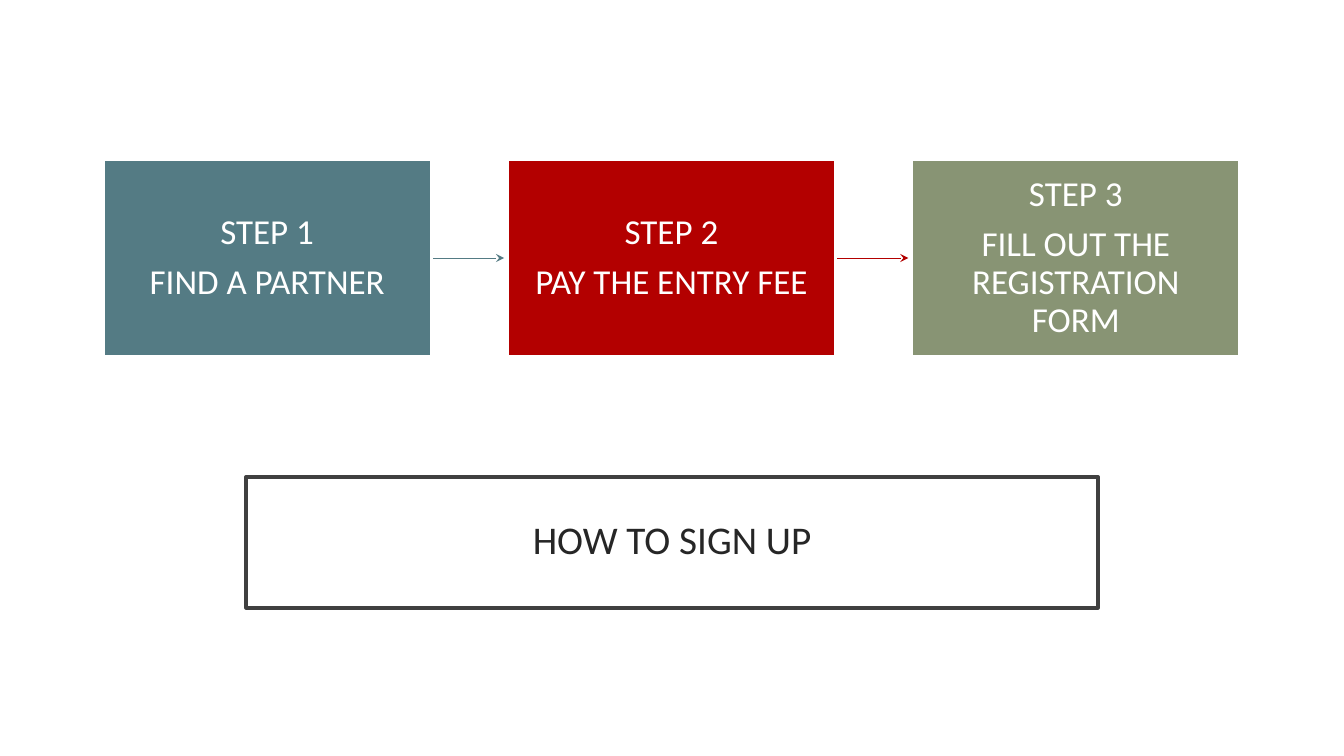
from dataclasses import dataclass

from pptx import Presentation
from pptx.dml.color import RGBColor
from pptx.enum.shapes import MSO_CONNECTOR, MSO_SHAPE
from pptx.enum.text import MSO_ANCHOR, MSO_AUTO_SIZE, PP_ALIGN
from pptx.oxml.ns import qn
from pptx.util import Inches, Pt
from lxml.etree import SubElement


@dataclass(frozen=True)
class Theme:
    font: str = "Calibri"
    title_size: float = 28
    step_size: float = 25
    paragraph_gap: float = 8.8
    border: float = 2.5
    arrow_width: float = 0.75
    white: RGBColor = RGBColor.from_string("FFFFFF")
    title_text: RGBColor = RGBColor.from_string("262626")
    title_border: RGBColor = RGBColor.from_string("404040")
    step_fills: tuple = tuple(map(RGBColor.from_string, ("547B84", "B30000", "889474")))


THEME = Theme()
STEPS = (
    ("STEP 1", "FIND A PARTNER"),
    ("STEP 2", "PAY THE ENTRY FEE"),
    ("STEP 3", "FILL OUT THE REGISTRATION FORM"),
)
STEP_LEFT, STEP_TOP, STEP_PITCH = 1.02, 1.58, 4.01
STEP_WIDTH, STEP_HEIGHT = 3.26, 1.96
ARROW_LENGTH = 0.72


def style_box(s, fill, border):
    s.fill.solid()
    s.fill.fore_color.rgb = fill
    s.line.color.rgb = border
    s.line.width = Pt(THEME.border)


def write_centred(s, lines, size, color, inset_x, inset_y):
    tf = s.text_frame
    tf.word_wrap = True
    tf.auto_size = MSO_AUTO_SIZE.NONE
    tf.vertical_anchor = MSO_ANCHOR.MIDDLE
    tf.margin_left = tf.margin_right = Inches(inset_x)
    tf.margin_top = tf.margin_bottom = Inches(inset_y)
    for i, line in enumerate(lines):
        p = tf.add_paragraph() if i else tf.paragraphs[0]
        p.text = line
        p.alignment = PP_ALIGN.CENTER
        p.line_spacing = 0.9
        p.space_before = Pt(THEME.paragraph_gap if i else 0)
        p.font.name = THEME.font
        p.font.size = Pt(size)
        p.font.color.rgb = color


def add_title(slide, text):
    s = slide.shapes.title
    s.left, s.top, s.width, s.height = map(Inches, (2.44, 4.73, 8.45, 1.3))
    style_box(s, THEME.white, THEME.title_border)
    write_centred(s, [text], THEME.title_size, THEME.title_text, 0.2, 0.2)


def add_step(slide, left, lines, fill):
    s = slide.shapes.add_shape(
        MSO_SHAPE.RECTANGLE, Inches(left), Inches(STEP_TOP),
        Inches(STEP_WIDTH), Inches(STEP_HEIGHT))
    s.shadow.inherit = False
    style_box(s, fill, THEME.white)
    write_centred(s, lines, THEME.step_size, THEME.white, 0.16, 0.17)
    return s


def add_arrow(slide, left, color):
    y = Inches(STEP_TOP + STEP_HEIGHT / 2)
    arrow = slide.shapes.add_connector(
        MSO_CONNECTOR.STRAIGHT, Inches(left), y, Inches(left + ARROW_LENGTH), y)
    arrow.line.color.rgb = color
    arrow.line.width = Pt(THEME.arrow_width)
    properties = arrow.element.spPr
    SubElement(properties.find(qn("a:ln")), qn("a:tailEnd"), type="stealth")
    SubElement(properties, qn("a:effectLst"))
    return arrow


def main():
    prs = Presentation()
    prs.slide_width, prs.slide_height = Inches(13.33), Inches(7.5)
    slide = prs.slides.add_slide(prs.slide_layouts[5])
    add_title(slide, "HOW TO SIGN UP")
    for i, (lines, fill) in enumerate(zip(STEPS, THEME.step_fills)):
        left = STEP_LEFT + i * STEP_PITCH
        # The arrow lies behind its box, so the white border covers its start.
        arrow = add_arrow(slide, left + STEP_WIDTH, fill) if i < len(STEPS) - 1 else None
        step = add_step(slide, left, lines, fill)
        if arrow is not None:
            arrow.begin_connect(step, 3)
    prs.save("out.pptx")


if __name__ == "__main__":
    main()
